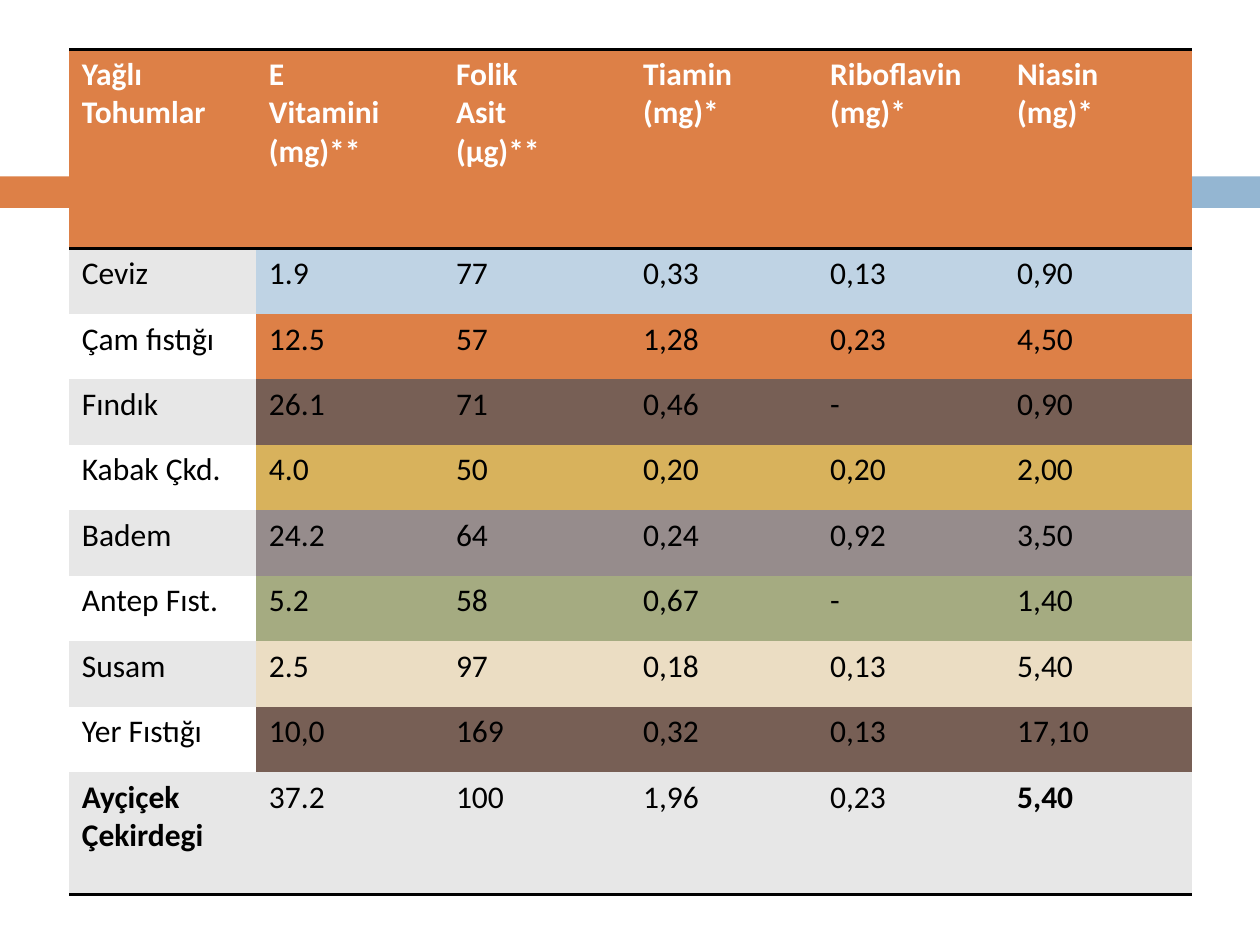
from lxml import etree
from pptx import Presentation
from pptx.dml.color import RGBColor
from pptx.enum import shapes
from pptx.oxml import ns
from pptx.util import Inches, Pt

COLORS = {
    "orange": "DD8047", "blue": "94B6D2", "pale_blue": "BFD3E4", "brown": "775F55",
    "gold": "D8B25C", "mauve": "968C8C", "green": "A5AB81", "cream": "EBDDC3",
    "grey": "E7E7E7", "white": "FFFFFF", "black": "000000",
}
HEADINGS = ["Yağlı Tohumlar", "E\nVitamini\n(mg)**", "Folik\nAsit\n(μg)**",
            "Tiamin\n(mg)*", "Riboflavin\n(mg)*", "Niasin\n(mg)*"]
SEEDS = [
    ("pale_blue", ["Ceviz", "1.9", "77", "0,33", "0,13", "0,90"]),
    ("orange", ["Çam fıstığı", "12.5", "57", "1,28", "0,23", "4,50"]),
    ("brown", ["Fındık", "26.1", "71", "0,46", "-", "0,90"]),
    ("gold", ["Kabak Çkd.", "4.0", "50", "0,20", "0,20", "2,00"]),
    ("mauve", ["Badem", "24.2", "64", "0,24", "0,92", "3,50"]),
    ("green", ["Antep Fıst.", "5.2", "58", "0,67", "-", "1,40"]),
    ("cream", ["Susam", "2.5", "97", "0,18", "0,13", "5,40"]),
    ("brown", ["Yer Fıstığı", "10,0", "169", "0,32", "0,13", "17,10"]),
    ("grey", ["Ayçiçek Çekirdegi", "37.2", "100", "1,96", "0,23", "5,40"]),
]
NO_GRID_STYLE = "{2D5ABB26-0587-4C30-8999-92F81FD0307C}"


def paint(fill, color):
    fill.solid()
    fill.fore_color.rgb = RGBColor.from_string(COLORS[color])


def add_rule(cell, side, position):
    rule = etree.Element(ns.qn(f"a:{side}"), w=str(Pt(2)))
    solid = etree.SubElement(rule, ns.qn("a:solidFill"))
    etree.SubElement(solid, ns.qn("a:srgbClr"), val=COLORS["black"])
    cell._tc.get_or_add_tcPr().insert(position, rule)


prs = Presentation()
prs.slide_width, prs.slide_height = Inches(10), Inches(7.5)
slide = prs.slides.add_slide(prs.slide_layouts[6])

for left, width, color in [(0, 0.58, "orange"), (0.65, 9.35, "blue")]:
    band = slide.shapes.add_shape(shapes.MSO_SHAPE.RECTANGLE, Inches(left), Inches(1.4),
                                  Inches(width), Inches(0.25))
    band.shadow.inherit = False
    band.line.fill.background()
    paint(band.fill, color)

content = [("orange", HEADINGS)] + SEEDS
last = len(content) - 1
nutrients = slide.shapes.add_table(len(content), len(HEADINGS), Inches(0.55), Inches(0.39),
                                   Inches(8.91), Inches(6.72)).table
nutrients._tbl.tblPr.find(ns.qn("a:tableStyleId")).text = NO_GRID_STYLE
for column in nutrients.columns:
    column.width = Inches(8.91 / len(HEADINGS))

for r, (row_color, values) in enumerate(content):
    nutrients.rows[r].height = Inches({0: 1.58, last: 0.97}.get(r, 0.52))
    for c, value in enumerate(values):
        cell = nutrients.cell(r, c)
        name_color = "grey" if r % 2 else "white"
        paint(cell.fill, name_color if r and c == 0 else row_color)
        if r == 0:
            add_rule(cell, "lnT", 0)
            add_rule(cell, "lnB", 1)
        elif r == last:
            add_rule(cell, "lnB", 0)
        for i, line in enumerate(value.split("\n")):
            frame = cell.text_frame
            paragraph = frame.add_paragraph() if i else frame.paragraphs[0]
            run = paragraph.add_run()
            run.text = line
            run.font.name = "Calibri"
            run.font.size = Pt(18)
            run.font.bold = r == 0 or (r == last and c in (0, 5))
            run.font.color.rgb = RGBColor.from_string(COLORS["black" if r else "white"])

prs.save("out.pptx")
